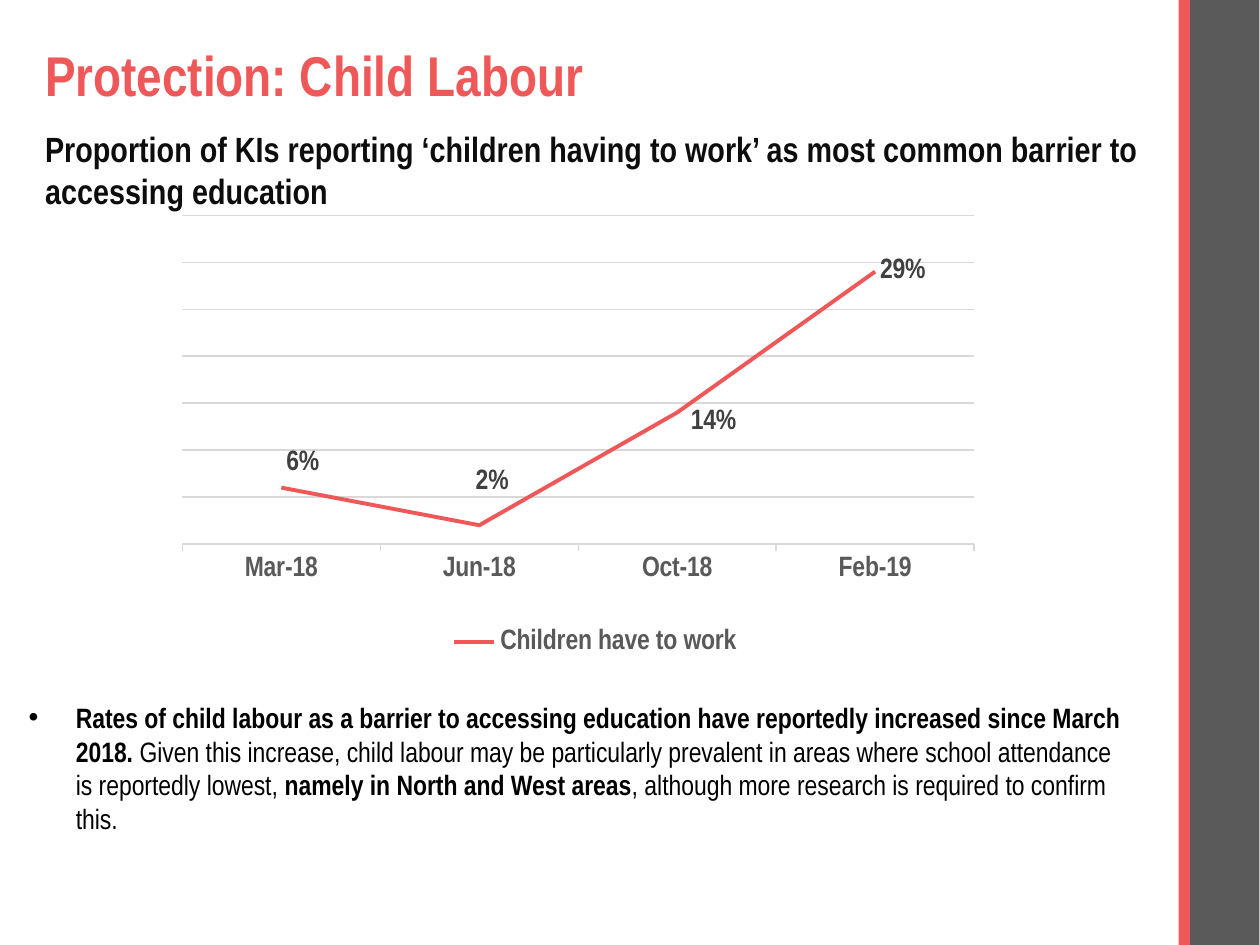
from lxml import etree
from pptx import Presentation, oxml
from pptx import util as u
from pptx.chart import data as chart_data
from pptx.dml import color as dml
from pptx.enum import chart as charts, shapes, text

FONT = "Arial Narrow"
RED, GREY, GRID = "EE5859", "5A5A5A", "D9D9D9"

# Content: places are left, top, width, height in cm
BARS = [((23.94, 0, 1.45, 19.05), GREY), ((23.76, 0, 0.23, 19.05), RED)]
TEXTS = [
    {"place": (0.66, 0.64, 22.07, 1.88), "size": 32, "color": RED,
     "anchor": text.MSO_ANCHOR.MIDDLE, "spacing": 0.9,
     "spans": [("Protection: Child Labour", True)]},
    {"place": (0.66, 2.44, 22.71, 1.96), "size": 20, "color": "0D0D0D",
     "spans": [("Proportion of KIs reporting ‘children having to work’ as most "
                "common barrier to accessing education", True)]},
    {"place": (0.33, 14, 22.71, 3.68), "size": 16, "color": "000000", "bullet": "•",
     "spans": [("Rates of child labour as a barrier to accessing education have "
                "reportedly increased since March 2018. ", True),
               ("Given this increase, child labour may be particularly prevalent in "
                "areas where school attendance is reportedly lowest, ", False),
               ("namely in North and West areas", True),
               (", although more research is required to confirm this.", False)]},
]
CHART_PLACE = (3.33, 3.56, 17.35, 9.75)
SERIES = "Children have to work"
# Newest first; the axis runs in reverse, so time reads left to right
RATES = [("Feb-19", 0.29), ("Oct-18", 0.14), ("Jun-18", 0.02), ("Mar-18", 0.06)]
PLOT_LAYOUT = {"layoutTarget": "inner", "xMode": "edge", "yMode": "edge",
               "x": 0.02, "y": 0.08, "w": 0.92, "h": 0.68}
LABEL_SHIFTS = {1: (0.01, 0.02), 2: (-0.01, -0.09), 3: (0, -0.05)}


def rgb(value):
    return dml.RGBColor.from_string(value)


def cm(place):
    return [u.Cm(length) for length in place]


def style_font(font, size, color, bold=True):
    for name, value in {"name": FONT, "size": u.Pt(size), "bold": bold}.items():
        setattr(font, name, value)
    font.color.rgb = rgb(color)


def style_line(line, color, width):
    line.color.rgb = rgb(color)
    line.width = u.Pt(width)


def manual_layout(values):
    layout = oxml.parse_xml(f"<c:layout {oxml.ns.nsdecls('c')}><c:manualLayout/></c:layout>")
    for name, value in values.items():
        etree.SubElement(layout[0], oxml.ns.qn(f"c:{name}")).set("val", str(value))
    return layout


def add_text(page, item):
    box = page.shapes.add_textbox(*cm(item["place"]))
    frame = box.text_frame
    frame.word_wrap = True
    frame.vertical_anchor = item.get("anchor", text.MSO_ANCHOR.TOP)
    para = frame.paragraphs[0]
    para.line_spacing = item.get("spacing")
    if "bullet" in item:
        props = para._p.get_or_add_pPr()
        props.set("marL", str(u.Cm(0.95)))
        props.set("indent", str(u.Cm(-0.95)))
        for tag, key, value in (("a:buFont", "typeface", "Arial"),
                                ("a:buChar", "char", item["bullet"])):
            etree.SubElement(props, oxml.ns.qn(tag)).set(key, value)
    for words, bold in item["spans"]:
        span = para.add_run()
        span.text = words
        style_font(span.font, item["size"], item["color"], bold)


def add_rate_chart(page):
    data = chart_data.CategoryChartData(number_format="0%")
    data.categories = [month for month, _ in RATES]
    data.add_series(SERIES, [share for _, share in RATES])
    chart = page.shapes.add_chart(charts.XL_CHART_TYPE.LINE, *cm(CHART_PLACE), data).chart
    style_font(chart.font, 10, "000000", False)
    chart.has_title = False
    chart.has_legend = True
    chart.legend.position = charts.XL_LEGEND_POSITION.BOTTOM
    chart.legend.include_in_layout = False
    style_font(chart.legend.font, 16, "595959")

    # Axes
    months, shares = chart.category_axis, chart.value_axis
    months.reverse_order = True
    months.major_tick_mark = charts.XL_TICK_MARK.OUTSIDE
    style_font(months.tick_labels.font, 16, "595959")
    style_line(months.format.line, GRID, 0.75)
    shares.visible = False
    shares.minimum_scale, shares.maximum_scale, shares.major_unit = 0, 0.35, 0.05
    shares.has_major_gridlines = True
    style_line(shares.major_gridlines.format.line, GRID, 0.75)

    # Line and its labels
    plot = chart.plots[0]
    plot.vary_by_categories = False
    series = plot.series[0]
    series.smooth = False
    series.marker.style = charts.XL_MARKER_STYLE.NONE
    style_line(series.format.line, RED, 2.25)
    labels = series.data_labels
    labels.show_value = True
    labels.number_format, labels.number_format_is_linked = "0%", False
    labels.position = charts.XL_LABEL_POSITION.RIGHT
    style_font(labels.font, 16, "404040")
    for index, (x, y) in LABEL_SHIFTS.items():
        label = series.points[index].data_label
        label.position = charts.XL_LABEL_POSITION.RIGHT
        style_font(label.font, 16, "404040")
        element = labels._element.xpath(f"c:dLbl[c:idx/@val='{index}']")[0]
        element.insert(1, manual_layout({"x": x, "y": y}))
    for leader in labels._element.xpath("c:showLeaderLines"):
        leader.set("val", "0")

    # Plot area
    area = chart._chartSpace.chart.plotArea
    for old in area.findall(oxml.ns.qn("c:layout")):
        area.remove(old)
    area.insert(0, manual_layout(PLOT_LAYOUT))


def main():
    deck = Presentation()
    deck.slide_width, deck.slide_height = cm((25.4, 19.05))
    page = deck.slides.add_slide(deck.slide_layouts[6])
    for place, color in BARS:
        bar = page.shapes.add_shape(shapes.MSO_SHAPE.RECTANGLE, *cm(place))
        bar.shadow.inherit = False
        bar.fill.solid()
        bar.fill.fore_color.rgb = rgb(color)
        bar.line.fill.background()
    add_rate_chart(page)
    for item in TEXTS:
        add_text(page, item)
    deck.save("out.pptx")


if __name__ == "__main__":
    main()
